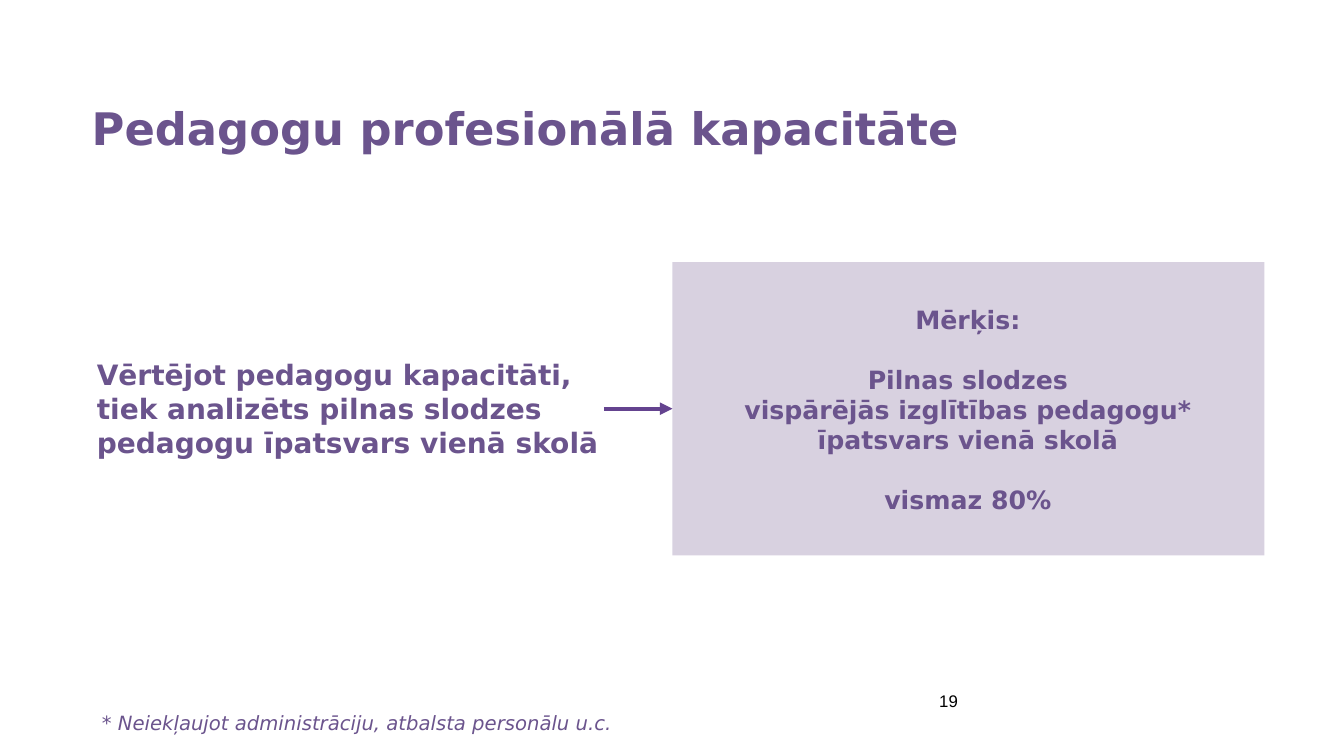
from dataclasses import dataclass

from lxml import etree
from pptx import Presentation
from pptx.dml.color import RGBColor
from pptx.enum.shapes import MSO_CONNECTOR, MSO_SHAPE
from pptx.enum.text import MSO_ANCHOR, PP_ALIGN
from pptx.oxml.ns import qn
from pptx.shapes.autoshape import Shape
from pptx.slide import Slide
from pptx.util import Inches, Pt

LEFT, CENTER, RIGHT = PP_ALIGN.LEFT, PP_ALIGN.CENTER, PP_ALIGN.RIGHT
TOP, MIDDLE = MSO_ANCHOR.TOP, MSO_ANCHOR.MIDDLE
STRAIGHT, RECTANGLE = MSO_CONNECTOR.STRAIGHT, MSO_SHAPE.RECTANGLE
LEFT_SIDE, RIGHT_SIDE = 1, 3


@dataclass(frozen=True)
class Theme:
    """Colours, fonts and type sizes of the slide."""
    font: str = "DejaVu Sans"
    number_font: str = "Arial"
    text: str = "6B548D"
    panel: str = "745D93"
    panel_opacity: int = 28
    arrow: str = "64438F"
    number: str = "000000"
    title_size: int = 32
    statement_size: int = 20
    goal_size: int = 18
    goal_gap: int = 21
    footnote_size: int = 14
    number_size: int = 12
    arrow_width: int = 3


@dataclass(frozen=True)
class Box:
    """Position and size in inches."""
    left: float
    top: float
    width: float
    height: float

    def lengths(self) -> tuple[Inches, ...]:
        """Return the four values as lengths."""
        return tuple(map(Inches, (self.left, self.top, self.width, self.height)))


@dataclass(frozen=True)
class Line:
    """One paragraph and the space before it in points."""
    text: str
    before: int = 0


THEME = Theme()
GOAL = (
    Line("Mērķis:"),
    Line("Pilnas slodzes", THEME.goal_gap),
    Line("vispārējās izglītības pedagogu* īpatsvars vienā skolā"),
    Line("vismaz 80%", THEME.goal_gap),
)


def add_text(slide: Slide, box: Box, *lines: Line, size: int,
             font: str = THEME.font, color: str = THEME.text,
             bold: bool = False, italic: bool = False,
             align: PP_ALIGN = LEFT, anchor: MSO_ANCHOR = TOP,
             inset: float = 0.05, spacing: float = 1.0) -> Shape:
    """Add a text box with one paragraph per line."""
    holder = slide.shapes.add_textbox(*box.lengths())
    frame = holder.text_frame
    frame.word_wrap = True
    frame.vertical_anchor = anchor
    frame.margin_left = frame.margin_right = Inches(inset)
    frame.margin_top = frame.margin_bottom = Inches(inset)
    for index, line in enumerate(lines):
        paragraph = frame.add_paragraph() if index else frame.paragraphs[0]
        paragraph.alignment = align
        paragraph.line_spacing = spacing
        paragraph.space_before = Pt(line.before)
        run = paragraph.add_run()
        run.text = line.text
        run.font.name = font
        run.font.size = Pt(size)
        run.font.bold = bold
        run.font.italic = italic
        run.font.color.rgb = RGBColor.from_string(color)
    return holder


def add_panel(slide: Slide, box: Box) -> Shape:
    """Add the translucent panel behind the goal."""
    panel = slide.shapes.add_shape(RECTANGLE, *box.lengths())
    panel.shadow.inherit = False
    panel.line.fill.background()
    panel.fill.solid()
    panel.fill.fore_color.rgb = RGBColor.from_string(THEME.panel)
    color = panel.fill._xPr.find(qn("a:solidFill"))[0]
    etree.SubElement(color, qn("a:alpha"), val=str(THEME.panel_opacity * 1000))
    return panel


def add_arrow(slide: Slide, source: Shape, target: Shape) -> None:
    """Join two shapes with an arrow from left to right."""
    arrow = slide.shapes.add_connector(STRAIGHT, 0, 0, 0, 0)
    arrow.begin_connect(source, RIGHT_SIDE)
    arrow.end_connect(target, LEFT_SIDE)
    arrow.line.width = Pt(THEME.arrow_width)
    arrow.line.color.rgb = RGBColor.from_string(THEME.arrow)
    etree.SubElement(arrow.line._get_or_add_ln(), qn("a:tailEnd"), type="triangle")
    etree.SubElement(arrow._element.spPr, qn("a:effectLst"))


def main() -> None:
    """Build the slide and save it."""
    deck = Presentation()
    deck.slide_width, deck.slide_height = Inches(13.33), Inches(7.5)
    slide = deck.slides.add_slide(deck.slide_layouts[6])
    add_text(slide, Box(0.91, 0.57, 9.17, 1.45),
             Line("Pedagogu profesionālā kapacitāte"), size=THEME.title_size,
             bold=True, anchor=MIDDLE, inset=0, spacing=0.9)
    panel = add_panel(slide, Box(6.67, 2.6, 5.87, 2.91))
    add_text(slide, Box(6.75, 2.73, 5.7, 2.66), *GOAL, size=THEME.goal_size,
             bold=True, align=CENTER, anchor=MIDDLE)
    statement = add_text(
        slide, Box(0.91, 3.5, 5.08, 1.11),
        Line("Vērtējot pedagogu kapacitāti, tiek analizēts pilnas slodzes "
             "pedagogu īpatsvars vienā skolā"),
        size=THEME.statement_size, bold=True)
    add_arrow(slide, statement, panel)
    add_text(slide, Box(0.96, 7, 9.35, 0.34),
             Line("* Neiekļaujot administrāciju, atbalsta personālu u.c."),
             size=THEME.footnote_size, italic=True)
    add_text(slide, Box(6.44, 6.75, 3.11, 0.4), Line("19"),
             size=THEME.number_size, font=THEME.number_font,
             color=THEME.number, align=RIGHT, anchor=MIDDLE)
    deck.save("out.pptx")


if __name__ == "__main__":
    main()
